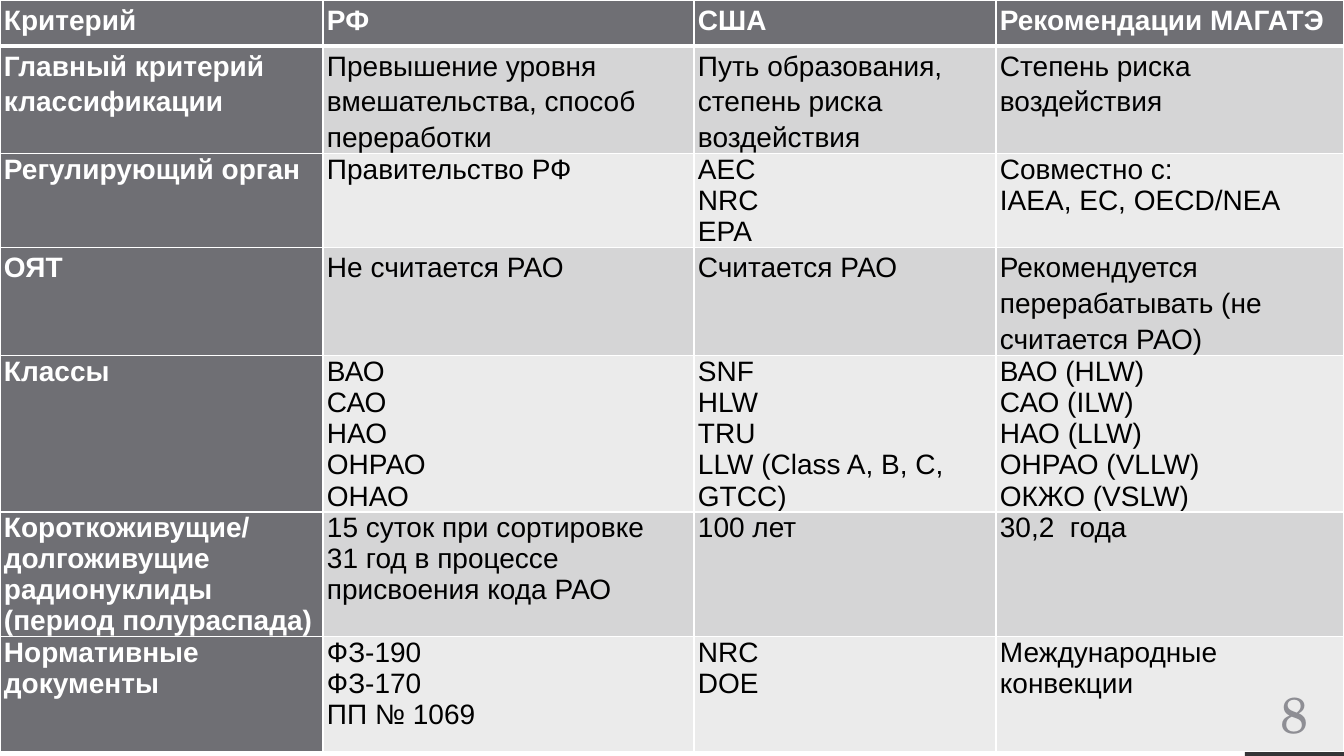
import pptx
import pptx.util
import pptx.dml.color
import pptx.enum.shapes
import pptx.enum.text
import lxml.etree

RGB = pptx.dml.color.RGBColor
WHITE = RGB(0xFF, 0xFF, 0xFF)
BLACK = RGB(0, 0, 0)
DARK = RGB(0x35, 0x35, 0x37)
HEAD = RGB(0x6F, 0x6F, 0x74)
ODD = RGB(0xD5, 0xD5, 0xD6)
EVEN = RGB(0xEB, 0xEB, 0xEB)
MUTED = RGB(0x8E, 0x8E, 0x94)
SCALE = 914400 / 100.8
NS = "http://schemas.openxmlformats.org/drawingml/2006/main"

WIDTHS = [323, 371, 302, 348]
HEIGHTS = [46, 107, 94, 108, 156, 125, 115]
LOOSE = {0, 1, 3}
ROWS = [
    ["Критерий", "РФ", "США", "Рекомендации МАГАТЭ"],
    ["Главный критерий классификации",
     "Превышение уровня вмешательства, способ переработки",
     "Путь образования, степень риска воздействия",
     "Степень риска воздействия"],
    ["Регулирующий орган", "Правительство РФ", "AEC\vNRC\vEPA",
     "Совместно с:\nIAEA, EC, OECD/NEA"],
    ["ОЯТ", "Не считается РАО", "Считается РАО",
     "Рекомендуется перерабатывать (не считается РАО)"],
    ["Классы", "ВАО\vСАО\nНАО\nОНРАО\nОНАО",
     "SNF\nHLW\vTRU\nLLW (Class A, B, C, GTCC)",
     "ВАО (HLW)\vСАО (ILW)\nНАО (LLW)\nОНРАО (VLLW)\nОКЖО (VSLW)"],
    ["Короткоживущие/ долгоживущие радионуклиды (период полураспада)",
     "15 суток при сортировке\n31 год в процессе присвоения кода РАО",
     "100 лет", "30,2  года"],
    ["Нормативные документы", "ФЗ-190\vФЗ-170\vПП № 1069", "NRC\nDOE",
     "Международные конвекции"],
]


def px(n):
    return pptx.util.Emu(round(n * SCALE))


def style(para, face, size, color, bold=False):
    font = para.font
    font.name = face
    font.size = pptx.util.Pt(size)
    font.color.rgb = color
    font.bold = bold


def edge(cell, side, width):
    props = cell._tc.get_or_add_tcPr()
    line = lxml.etree.SubElement(props, f"{{{NS}}}ln{side}", w=str(pptx.util.Pt(width)))
    fill = lxml.etree.SubElement(line, f"{{{NS}}}solidFill")
    lxml.etree.SubElement(fill, f"{{{NS}}}srgbClr", val=str(WHITE))


def fill_cell(cell, text, row, col):
    top, head = row == 0, row == 0 or col == 0
    cell.margin_left = cell.margin_right = px(4)
    cell.margin_top = cell.margin_bottom = 0
    for side in "LRTB":
        thick = (top and side == "B") or (row == 1 and side == "T")
        edge(cell, side, 3 if thick else 1)
    cell.fill.solid()
    cell.fill.fore_color.rgb = HEAD if head else ODD if row % 2 else EVEN
    cell.text = text
    for para in cell.text_frame.paragraphs:
        style(para, "Arial", 20, WHITE if head else BLACK, head)
        if row in LOOSE:
            para.line_spacing = 1.15
            para.space_after = pptx.util.Pt(10)


def add_grid(slide):
    frame = slide.shapes.add_table(len(ROWS), len(WIDTHS), 0, 0,
                                   px(sum(WIDTHS)), px(sum(HEIGHTS)))
    grid = frame.table
    for col, width in zip(grid.columns, WIDTHS):
        col.width = px(width)
    for row, height in zip(grid.rows, HEIGHTS):
        row.height = px(height)
    for r, texts in enumerate(ROWS):
        for c, text in enumerate(texts):
            fill_cell(grid.cell(r, c), text, r, c)


def add_band(slide, x, y, w, h):
    band = slide.shapes.add_shape(pptx.enum.shapes.MSO_SHAPE.RECTANGLE,
                                  px(x), px(y), px(w), px(h))
    band.shadow.inherit = False
    band.fill.solid()
    band.fill.fore_color.rgb = DARK
    band.line.fill.background()


def add_label(slide, text, x, y, w, h):
    frame = slide.shapes.add_textbox(px(x), px(y), px(w), px(h)).text_frame
    frame.word_wrap = True
    frame.vertical_anchor = pptx.enum.text.MSO_ANCHOR.MIDDLE
    frame.margin_left = frame.margin_right = px(5)
    frame.margin_top = frame.margin_bottom = px(5)
    frame.text = text
    para = frame.paragraphs[0]
    para.alignment = pptx.enum.text.PP_ALIGN.CENTER
    style(para, "TeX Gyre Schola", 36, MUTED)


def main():
    deck = pptx.Presentation()
    deck.slide_width, deck.slide_height = px(1344), px(756)
    slide = deck.slides.add_slide(deck.slide_layouts[6])
    add_band(slide, 1245, 0, 99, 756)
    add_grid(slide)
    add_label(slide, "8", 1245, 680, 99, 66)
    deck.save("out.pptx")


if __name__ == "__main__":
    main()
